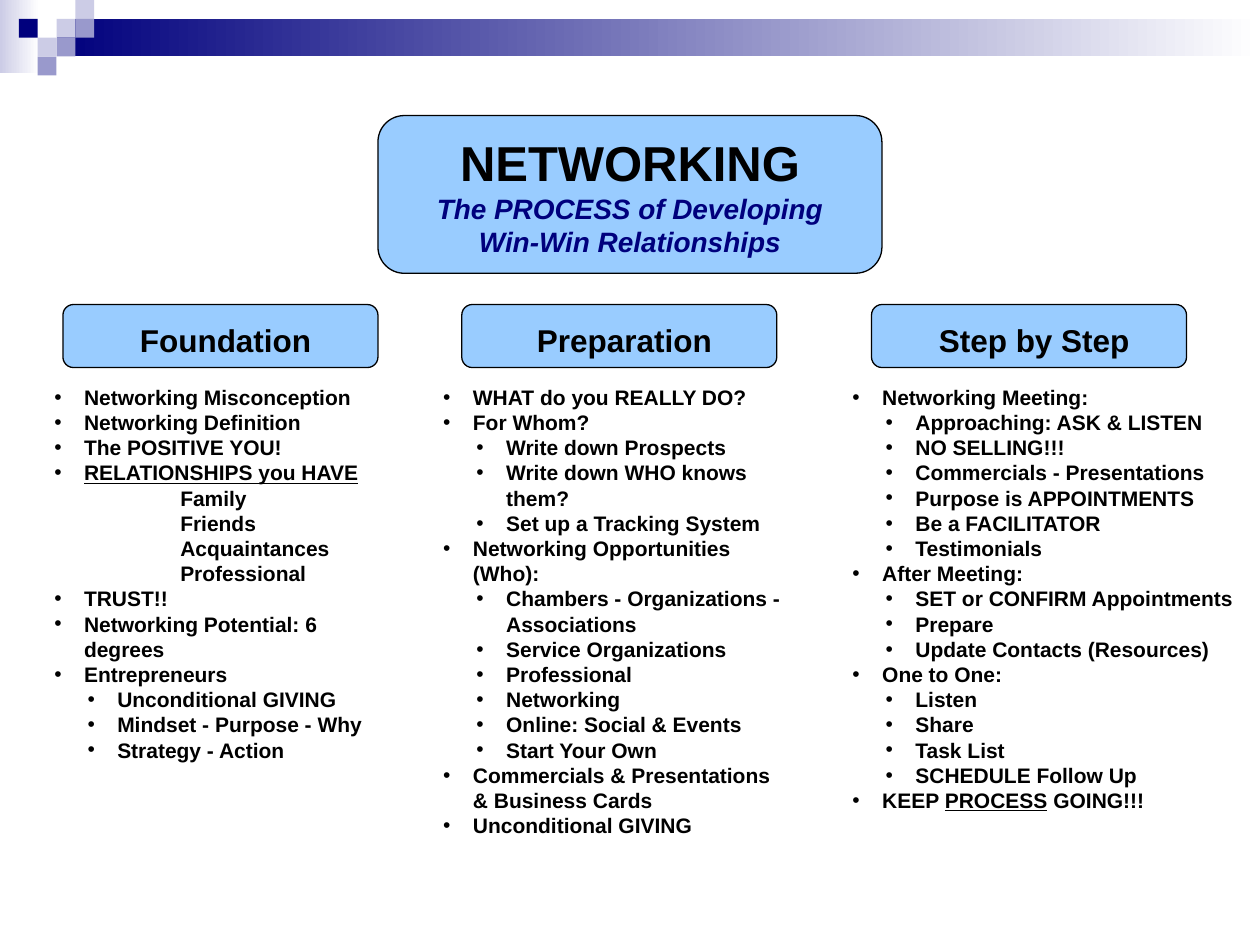
import pptx
import pptx.util
import pptx.dml.color
import pptx.enum.shapes
import pptx.enum.text
import pptx.oxml.ns
import lxml.etree

Cm, Pt = pptx.util.Cm, pptx.util.Pt
RGB = pptx.dml.color.RGBColor
SHAPE = pptx.enum.shapes.MSO_SHAPE
ALIGN = pptx.enum.text.PP_ALIGN
qn = pptx.oxml.ns.qn

NAVY = RGB(0x00, 0x00, 0x7D)
LILAC = RGB(0xCC, 0xCC, 0xE6)
VIOLET = RGB(0x99, 0x99, 0xCC)
SKY = RGB(0x99, 0xCC, 0xFF)
BLACK = RGB(0, 0, 0)
WHITE = RGB(0xFF, 0xFF, 0xFF)

# Content: list items are (level, text); "_" sets off underlined words
TITLE = "NETWORKING"
SUBTITLE = ["The PROCESS of Developing", "Win-Win Relationships"]
TOP, SUB, PLAIN = "top", "sub", "plain"
COLUMNS = [
    dict(head="Foundation", box_x=1.27, list_x=0.84, list_w=7.2, list_h=7.44, items=[
        (TOP, "Networking Misconception"),
        (TOP, "Networking Definition"),
        (TOP, "The POSITIVE YOU!"),
        (TOP, "_RELATIONSHIPS you HAVE_"),
        (PLAIN, "Family"),
        (PLAIN, "Friends"),
        (PLAIN, "Acquaintances"),
        (PLAIN, "Professional"),
        (TOP, "TRUST!!"),
        (TOP, "Networking Potential: 6 degrees"),
        (TOP, "Entrepreneurs"),
        (SUB, "Unconditional GIVING"),
        (SUB, "Mindset - Purpose - Why"),
        (SUB, "Strategy - Action"),
    ]),
    dict(head="Preparation", box_x=9.31, list_x=8.68, list_w=7.41, list_h=8.97, items=[
        (TOP, "WHAT do you REALLY DO?"),
        (TOP, "For Whom?"),
        (SUB, "Write down Prospects"),
        (SUB, "Write down WHO knows them?"),
        (SUB, "Set up a Tracking System"),
        (TOP, "Networking Opportunities (Who):"),
        (SUB, "Chambers - Organizations - Associations"),
        (SUB, "Service Organizations"),
        (SUB, "Professional"),
        (SUB, "Networking"),
        (SUB, "Online: Social & Events"),
        (SUB, "Start Your Own"),
        (TOP, "Commercials & Presentations & Business Cards"),
        (TOP, "Unconditional GIVING"),
    ]),
    dict(head="Step by Step", box_x=17.57, list_x=16.93, list_w=8.47, list_h=8.97, items=[
        (TOP, "Networking Meeting:"),
        (SUB, "Approaching: ASK & LISTEN"),
        (SUB, "NO SELLING!!!"),
        (SUB, "Commercials - Presentations"),
        (SUB, "Purpose is APPOINTMENTS"),
        (SUB, "Be a FACILITATOR"),
        (SUB, "Testimonials"),
        (TOP, "After Meeting:"),
        (SUB, "SET or CONFIRM Appointments"),
        (SUB, "Prepare"),
        (SUB, "Update Contacts (Resources)"),
        (TOP, "One to One:"),
        (SUB, "Listen"),
        (SUB, "Share"),
        (SUB, "Task List"),
        (SUB, "SCHEDULE Follow Up"),
        (TOP, "KEEP _PROCESS_ GOING!!!"),
    ]),
]
# Left margin and first-line indent in cm, by level
INDENTS = {TOP: (0.6, -0.6), SUB: (1.27, -0.6), PLAIN: (2.54, 0)}
# Corner squares as (column, row, colour) on a grid of UNIT cm
UNIT = 0.38
SQUARES = [(3, 1, LILAC), (4, 0, LILAC), (4, 1, VIOLET), (2, 2, LILAC),
           (1, 1, NAVY), (3, 2, VIOLET), (2, 3, VIOLET)]


def add_box(s, kind, x, y, w, h, color, fade=False, outlined=False):
    sp = s.shapes.add_shape(kind, Cm(x), Cm(y), Cm(w), Cm(h))
    sp.shadow.inherit = False
    if fade:
        sp.fill.gradient()
        sp.fill.gradient_angle = 0
        for stop, c in zip(sp.fill.gradient_stops, (color, WHITE)):
            stop.color.rgb = c
    else:
        sp.fill.solid()
        sp.fill.fore_color.rgb = color
    if outlined:
        sp.line.color.rgb = BLACK
        sp.line.width = Pt(0.75)
    else:
        sp.line.fill.background()


def place_text(sp, x, y, w, h):
    sp.left, sp.top, sp.width, sp.height = Cm(x), Cm(y), Cm(w), Cm(h)
    tf = sp.text_frame
    tf.word_wrap = True
    tf.auto_size = pptx.enum.text.MSO_AUTO_SIZE.NONE
    tf.vertical_anchor = pptx.enum.text.MSO_ANCHOR.TOP
    return tf


def add_paragraph(tf, first, align):
    p = tf.paragraphs[0] if first else tf.add_paragraph()
    p.alignment = align
    p.line_spacing = 1.0
    p.space_before = p.space_after = Pt(0)
    return p


def add_run(p, text, size, color=BLACK, italic=False, underline=False):
    r = p.add_run()
    r.text = text
    f = r.font
    f.name, f.size, f.bold, f.italic = "Arial", Pt(size), True, italic
    f.underline = underline
    f.color.rgb = color


def set_bullet(p, level):
    margin, indent = INDENTS[level]
    pPr = p._p.get_or_add_pPr()
    pPr.set("marL", str(Cm(margin)))
    pPr.set("indent", str(Cm(indent)))
    if level == PLAIN:
        lxml.etree.SubElement(pPr, qn("a:buNone"))
    else:
        lxml.etree.SubElement(pPr, qn("a:buFont")).set("typeface", "Arial")
        lxml.etree.SubElement(pPr, qn("a:buChar")).set("char", "•")


def bring_to_front(sp):
    sp._element.getparent().append(sp._element)


def main():
    prs = pptx.Presentation()
    prs.slide_width, prs.slide_height = Cm(25.4), Cm(19.05)
    s = prs.slides.add_slide(prs.slide_layouts[4])
    title, *bodies = list(s.placeholders)

    # Banner and corner squares
    add_box(s, SHAPE.RECTANGLE, 0, 0, 0.79, 1.47, LILAC, fade=True)
    add_box(s, SHAPE.RECTANGLE, 3 * UNIT, UNIT, 25.4 - 3 * UNIT, 2 * UNIT, NAVY, fade=True)
    for col, row, color in SQUARES:
        add_box(s, SHAPE.RECTANGLE, col * UNIT, row * UNIT, UNIT, UNIT, color)

    # Title
    add_box(s, SHAPE.ROUNDED_RECTANGLE, 7.62, 2.33, 10.16, 3.18, SKY, outlined=True)
    tf = place_text(title, 7.62, 2.54, 10.16, 2.82)
    add_run(add_paragraph(tf, True, ALIGN.CENTER), TITLE, 28)
    for line in SUBTITLE:
        add_run(add_paragraph(tf, False, ALIGN.CENTER), line, 16, NAVY, italic=True)
    bring_to_front(title)

    # Columns: heading box, heading, list
    for column, body in zip(COLUMNS, bodies):
        x = column["box_x"]
        add_box(s, SHAPE.ROUNDED_RECTANGLE, x, 6.14, 6.35, 1.27, SKY, outlined=True)
        head = s.shapes.add_textbox(0, 0, 0, 0)
        tf = place_text(head, x + 0.64, 6.35, 5.28, 1.02)
        add_run(add_paragraph(tf, True, ALIGN.CENTER), column["head"], 18)

        tf = place_text(body, column["list_x"], 7.62, column["list_w"], column["list_h"])
        for i, (level, text) in enumerate(column["items"]):
            p = add_paragraph(tf, i == 0, ALIGN.LEFT)
            set_bullet(p, level)
            for j, part in enumerate(text.split("_")):
                if part:
                    add_run(p, part, 12, underline=j % 2 == 1)
        bring_to_front(body)

    # Unused placeholders
    for body in bodies[len(COLUMNS):]:
        body._element.getparent().remove(body._element)

    prs.save("out.pptx")


if __name__ == "__main__":
    main()
